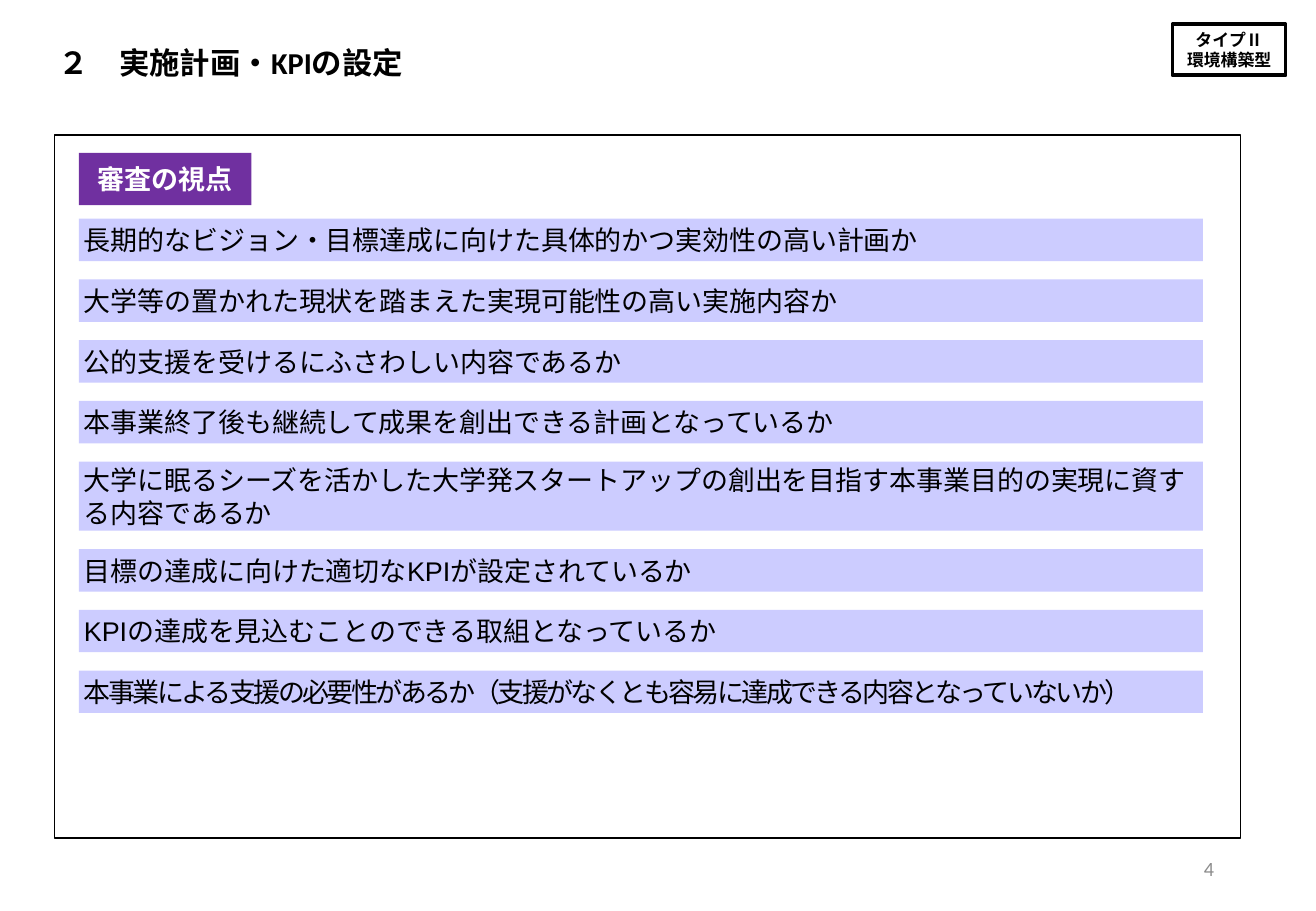
from collections import namedtuple

from pptx import Presentation
from pptx.dml.color import RGBColor
from pptx.enum.shapes import MSO_SHAPE as Shape
from pptx.enum.text import MSO_ANCHOR as Anchor, MSO_AUTO_SIZE as AutoSize, PP_ALIGN as Align
from pptx.util import Inches, Pt

BLACK = RGBColor(0x00, 0x00, 0x00)
WHITE = RGBColor(0xFF, 0xFF, 0xFF)
PURPLE = RGBColor(0x70, 0x30, 0xA0)
LAVENDER = RGBColor(0xCC, 0xCC, 0xFF)
GREY = RGBColor(0x8C, 0x8C, 0x8C)

COLUMNS, ROWS = 108.3, 75
CELL = Inches(0.1)
BAR_HEIGHT, TALL_BAR_HEIGHT, BAR_GAP = 3.5, 5.7, 1.5

Box = namedtuple("Box", "left top width height")
Criterion = namedtuple("Criterion", "text font height spacing", defaults=("Arial", BAR_HEIGHT, 0))

CRITERIA = [
    Criterion("長期的なビジョン・目標達成に向けた具体的かつ実効性の高い計画か", "Calibri"),
    Criterion("大学等の置かれた現状を踏まえた実現可能性の高い実施内容か"),
    Criterion("公的支援を受けるにふさわしい内容であるか"),
    Criterion("本事業終了後も継続して成果を創出できる計画となっているか", "Calibri"),
    Criterion("大学に眠るシーズを活かした大学発スタートアップの創出を目指す本事業目的の実現に資する内容であるか",
              height=TALL_BAR_HEIGHT),
    Criterion("目標の達成に向けた適切なKPIが設定されているか"),
    Criterion("KPIの達成を見込むことのできる取組となっているか"),
    Criterion("本事業による支援の必要性があるか（支援がなくとも容易に達成できる内容となっていないか）",
              spacing=-1.5),
]


def emu(box):
    """Convert a box in grid cells to slide lengths."""
    return [round(length * CELL) for length in box]


def write(holder, text, font="Arial", size=16, color=BLACK, bold=False,
          align=Align.LEFT, spacing=0, inset=0.04):
    """Put formatted text, one paragraph per line, into a shape."""
    frame = holder.text_frame
    frame.text = text
    frame.word_wrap = True
    frame.auto_size = AutoSize.NONE
    frame.vertical_anchor = Anchor.MIDDLE
    frame.margin_left = frame.margin_right = Inches(inset)
    frame.margin_top = frame.margin_bottom = Inches(0.04)
    for paragraph in frame.paragraphs:
        paragraph.alignment = align
        for run in paragraph.runs:
            run.font.name = font
            run.font.size = Pt(size)
            run.font.bold = bold
            run.font.color.rgb = color
            if spacing:
                run.font._element.set("spc", str(round(spacing * 100)))


def add_rectangle(slide, box, fill=WHITE, line_width=0):
    """Add a flat rectangle, with a black outline if it has a line width."""
    rectangle = slide.shapes.add_shape(Shape.RECTANGLE, *emu(box))
    rectangle.shadow.inherit = False
    rectangle.fill.solid()
    rectangle.fill.fore_color.rgb = fill
    if line_width:
        rectangle.line.color.rgb = BLACK
        rectangle.line.width = Pt(line_width)
    else:
        rectangle.line.fill.background()
    return rectangle


def add_heading(slide, box):
    """Place the slide title."""
    title = slide.shapes.title
    title.left, title.top, title.width, title.height = emu(box)
    write(title, "２　実施計画・KPIの設定", font="Calibri", size=18, bold=True)


def add_type_badge(slide, box):
    """Place the outlined programme type."""
    badge = add_rectangle(slide, box, line_width=2.25)
    write(badge, "タイプⅡ\n環境構築型", size=10, bold=True, align=Align.CENTER)


def add_review_panel(slide, box):
    """Place the framed review label and its stack of criteria."""
    add_rectangle(slide, box, line_width=1)
    left, top = box.left + 2, box.top + 1.5
    label = add_rectangle(slide, Box(left, top, 14.2, 4.3), fill=PURPLE)
    write(label, "審査の視点", color=WHITE, bold=True, align=Align.CENTER)
    top += 5.4
    for criterion in CRITERIA:
        bar = add_rectangle(slide, Box(left, top, box.width - 5.1, criterion.height), fill=LAVENDER)
        write(bar, criterion.text, font=criterion.font, spacing=criterion.spacing)
        top += criterion.height + BAR_GAP


def add_page_number(slide, box):
    """Place the page number at the lower right."""
    number = slide.shapes.add_textbox(*emu(box))
    write(number, "4", font="Calibri", size=12, color=GREY, align=Align.RIGHT, inset=0.1)


def main():
    """Build and save the slide."""
    deck = Presentation()
    deck.slide_width, deck.slide_height = round(COLUMNS * CELL), ROWS * CELL
    slide = deck.slides.add_slide(deck.slide_layouts[5])
    add_type_badge(slide, Box(96.5, 2, 9.3, 4.2))
    add_heading(slide, Box(4.4, 3.2, 40.5, 3.8))
    add_review_panel(slide, Box(4.5, 11.1, 97.6, 57.9))
    add_page_number(slide, Box(76.5, 69.5, 24.4, 4))
    deck.save("out.pptx")


if __name__ == "__main__":
    main()
